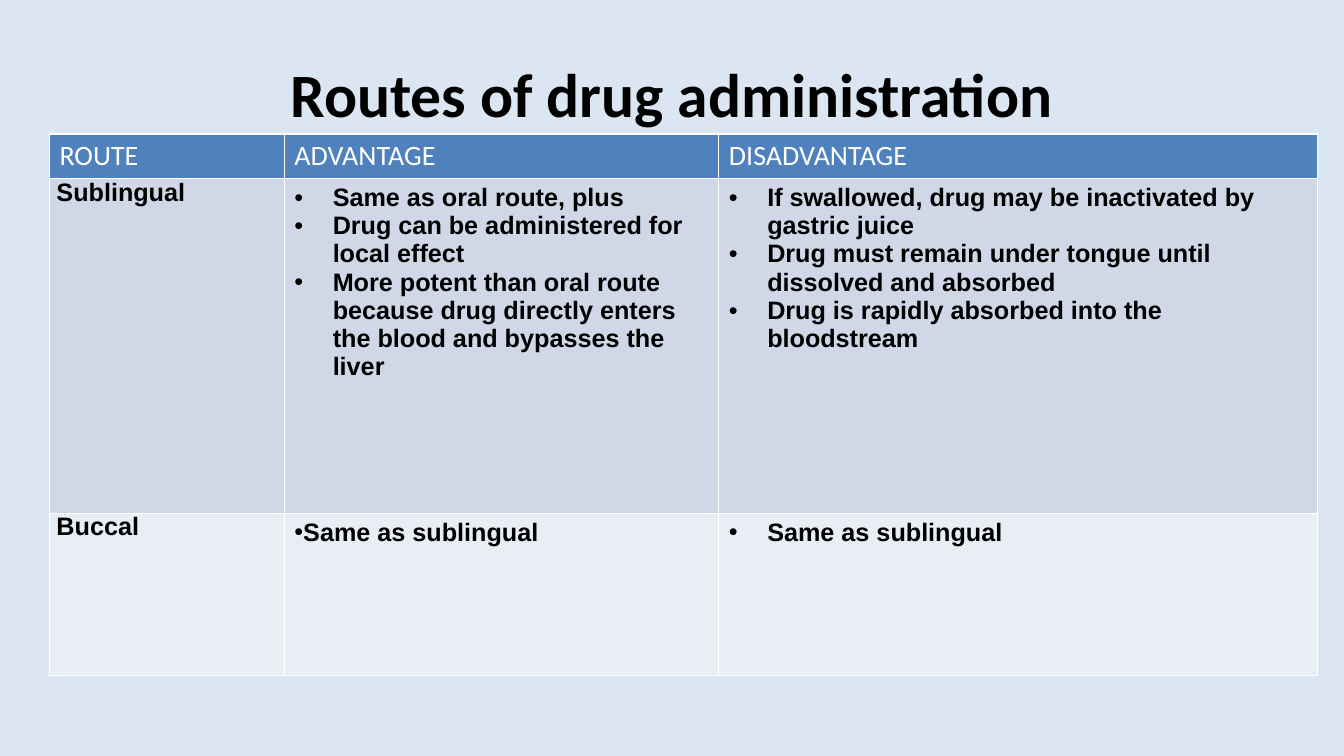
from dataclasses import dataclass

from lxml import etree
from pptx import Presentation
from pptx.dml.color import RGBColor
from pptx.enum.text import MSO_ANCHOR, PP_ALIGN
from pptx.oxml.ns import qn
from pptx.util import Inches, Pt

CENTER = PP_ALIGN.CENTER
MIDDLE = MSO_ANCHOR.MIDDLE
TITLE_ONLY = 5


@dataclass(frozen=True)
class Theme:
    background: str = "DCE6F2"
    ink: str = "000000"
    header_ink: str = "FFFFFF"
    header_fill: str = "4F81BD"
    band_fills: tuple = ("D0D8E8", "E9EDF4")
    border: str = "FFFFFF"
    border_width: float = 1
    heading_font: str = "Calibri"
    body_font: str = "Arial"
    title_size: int = 44
    header_size: int = 20
    body_size: int = 18
    hanging: float = 0.38
    label_inset: float = 0.07


class SlideBuilder:
    def __init__(self, deck, theme):
        self.deck = deck
        self.theme = theme
        self.slide = deck.slides.add_slide(deck.slide_layouts[TITLE_ONLY])
        backdrop = self.slide.background.fill
        backdrop.solid()
        backdrop.fore_color.rgb = RGBColor.from_string(theme.background)

    def across(self, percent):
        return round(self.deck.slide_width * percent / 100)

    def down(self, percent):
        return round(self.deck.slide_height * percent / 100)

    def box(self, left, top, width, height):
        return self.across(left), self.down(top), self.across(width), self.down(height)

    def format_runs(self, paragraph, font, size, color, bold):
        for run in paragraph.runs:
            run.font.name = font
            run.font.size = Pt(size)
            run.font.bold = bold
            run.font.color.rgb = RGBColor.from_string(color)

    def title(self, text, *area):
        heading = self.slide.shapes.title
        heading.left, heading.top, heading.width, heading.height = self.box(*area)
        heading.text_frame.text = text
        heading.text_frame.vertical_anchor = MIDDLE
        paragraph = heading.text_frame.paragraphs[0]
        paragraph.alignment = CENTER
        style = self.theme
        self.format_runs(paragraph, style.heading_font, style.title_size, style.ink, True)

    def bullet(self, paragraph, hanging):
        properties = paragraph._p.get_or_add_pPr()
        properties.set("marL", str(Inches(hanging)))
        properties.set("indent", str(-Inches(hanging)))
        etree.SubElement(properties, qn("a:buFont"), typeface=self.theme.body_font)
        etree.SubElement(properties, qn("a:buChar"), char="•")

    def paint(self, cell, color):
        cell.fill.solid()
        cell.fill.fore_color.rgb = RGBColor.from_string(color)
        properties = cell._tc.get_or_add_tcPr()
        for position, side in enumerate(("lnL", "lnR", "lnT", "lnB")):
            edge = etree.Element(qn(f"a:{side}"), w=str(Pt(self.theme.border_width)))
            fill = etree.SubElement(edge, qn("a:solidFill"))
            etree.SubElement(fill, qn("a:srgbClr"), val=self.theme.border)
            properties.insert(position, edge)

    def header_cell(self, cell, text):
        style = self.theme
        cell.text_frame.text = text
        self.format_runs(cell.text_frame.paragraphs[0], style.heading_font,
                         style.header_size, style.header_ink, False)
        self.paint(cell, style.header_fill)

    def body_cell(self, cell, lines, fill, hanging=None):
        style = self.theme
        cell.text_frame.text = "\n".join(lines)
        for paragraph in cell.text_frame.paragraphs:
            self.format_runs(paragraph, style.body_font, style.body_size, style.ink, True)
            if hanging is not None:
                self.bullet(paragraph, hanging)
        self.paint(cell, fill)

    def label_cell(self, cell, text, fill):
        self.body_cell(cell, [text], fill)
        cell.margin_left = cell.margin_right = Inches(self.theme.label_inset)
        cell.margin_top = cell.margin_bottom = 0

    def route_table(self, headers, routes, left, top, widths, heights):
        area = self.box(left, top, sum(widths), sum(heights))
        table = self.slide.shapes.add_table(len(heights), len(widths), *area).table
        for column, width in zip(table.columns, widths):
            column.width = self.across(width)
        for row, height in zip(table.rows, heights):
            row.height = self.down(height)
        for index, header in enumerate(headers):
            self.header_cell(table.cell(0, index), header)
        for row, (route, *effects) in enumerate(routes, start=1):
            fill = self.theme.band_fills[(row - 1) % 2]
            self.label_cell(table.cell(row, 0), route, fill)
            for column, (lines, hanging) in enumerate(effects, start=1):
                self.body_cell(table.cell(row, column), lines, fill, hanging)


def main():
    deck = Presentation()
    deck.slide_width, deck.slide_height = Inches(13.33), Inches(7.5)
    theme = Theme()
    builder = SlideBuilder(deck, theme)
    builder.title("Routes of drug administration", 5, 4, 90, 16.67)
    routes = [
        ("Sublingual",
         (["Same as oral route, plus",
           "Drug can be administered for local effect",
           "More potent than oral route because drug directly enters the blood "
           "and bypasses the liver"], theme.hanging),
         (["If swallowed, drug may be inactivated by gastric juice",
           "Drug must remain under tongue until dissolved and absorbed",
           "Drug is rapidly absorbed into the bloodstream"], theme.hanging)),
        ("Buccal",
         (["Same as sublingual"], 0),
         (["Same as sublingual"], theme.hanging)),
    ]
    builder.route_table(["ROUTE", "ADVANTAGE", "DISADVANTAGE"], routes,
                        left=3.68, top=17.73,
                        widths=(17.48, 32.33, 44.56), heights=(5.7, 44.27, 21.47))
    deck.save("out.pptx")


if __name__ == "__main__":
    main()
